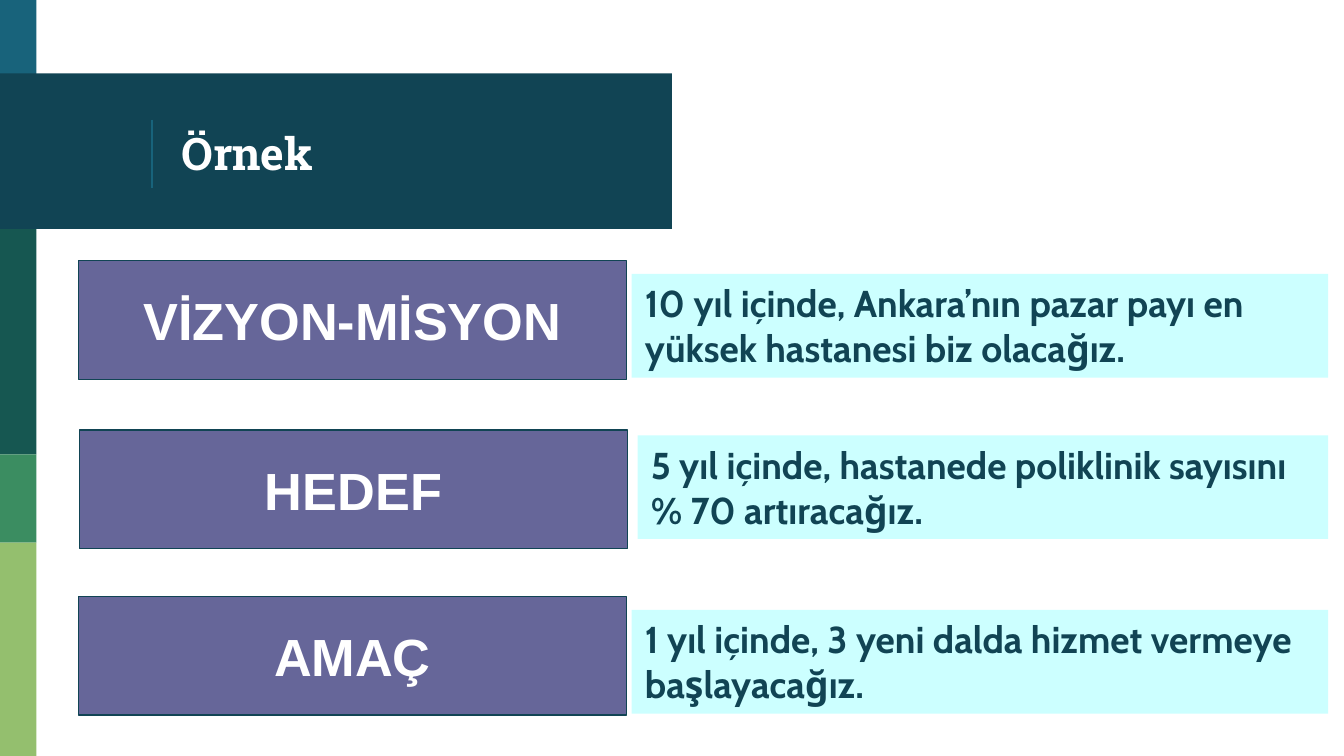
from pptx import Presentation
from pptx.dml.color import RGBColor
from pptx.enum.shapes import MSO_CONNECTOR, MSO_SHAPE
from pptx.enum.text import MSO_ANCHOR, MSO_AUTO_SIZE, PP_ALIGN
from pptx.oxml.xmlchemy import OxmlElement
from pptx.util import Cm, Pt

COLORS = {
    "blue": "18637B",
    "navy": "114454",
    "teal": "165751",
    "green": "3B8D61",
    "lime": "94BF6E",
    "purple": "666699",
    "cyan": "CCFFFF",
    "white": "FFFFFF",
}
TITLE = "Örnek"
BANDS = [
    ("blue", 0, 0.69, 1.47),
    ("navy", 1.39, 12.7, 2.94),
    ("teal", 4.33, 0.69, 4.26),
    ("green", 8.59, 0.69, 1.67),
    ("lime", 10.26, 0.69, 4.03),
]
ROWS = [
    ("VİZYON-MİSYON", 1.48, 4.93,
     "10 yıl içinde, Ankara’nın pazar payı en yüksek hastanesi biz olacağız.", 11.94, 5.18),
    ("HEDEF", 1.5, 8.13,
     "5 yıl içinde, hastanede poliklinik sayısını % 70 artıracağız.", 12.05, 8.23),
    ("AMAÇ", 1.48, 11.28,
     "1 yıl içinde, 3 yeni dalda hizmet vermeye başlayacağız.", 11.94, 11.53),
]
LABEL_WIDTH, LABEL_HEIGHT = 10.36, 2.24
TEXT_RIGHT, TEXT_HEIGHT = 25.1, 1.96


def color(name):
    return RGBColor.from_string(COLORS[name])


def add_box(slide, left, top, width, height, fill, outline=None):
    shape = slide.shapes.add_shape(
        MSO_SHAPE.RECTANGLE, Cm(left), Cm(top), Cm(width), Cm(height))
    shape.shadow.inherit = False
    shape.fill.solid()
    shape.fill.fore_color.rgb = color(fill)
    if outline:
        shape.line.color.rgb = color(outline)
        shape.line.width = Pt(0.75)
    else:
        shape.line.fill.background()
    return shape


def write(shape, text, font, size, font_color, align, anchor):
    frame = shape.text_frame
    frame.text = text
    frame.vertical_anchor = anchor
    paragraph = frame.paragraphs[0]
    paragraph.alignment = align
    paragraph.font.name = font
    paragraph.font.size = Pt(size)
    paragraph.font.bold = True
    paragraph.font.color.rgb = color(font_color)
    return frame


def add_title(slide):
    line = slide.shapes.add_connector(
        MSO_CONNECTOR.STRAIGHT, Cm(2.87), Cm(2.26), Cm(2.87), Cm(3.56))
    line.line.color.rgb = color("blue")
    line.line.width = Pt(0.75)
    line.element.spPr.append(OxmlElement("a:effectLst"))

    title = slide.shapes.title
    title.left, title.top, title.width, title.height = Cm(3.18), Cm(1.47), Cm(8.92), Cm(2.84)
    frame = write(title, TITLE, "Roboto Slab", 24, "white", PP_ALIGN.LEFT, MSO_ANCHOR.MIDDLE)
    frame.margin_left = frame.margin_right = frame.margin_top = frame.margin_bottom = Cm(0.25)
    frame.auto_size = MSO_AUTO_SIZE.NONE
    line.element.addnext(title.element)


def add_row(slide, label, label_left, label_top, text, text_left, text_top):
    label_box = add_box(
        slide, label_left, label_top, LABEL_WIDTH, LABEL_HEIGHT, "purple", "navy")
    frame = write(label_box, label, "Arial", 28, "white", PP_ALIGN.CENTER, MSO_ANCHOR.MIDDLE)
    frame.word_wrap = False

    text_box = add_box(
        slide, text_left, text_top, TEXT_RIGHT - text_left, TEXT_HEIGHT, "cyan")
    frame = write(text_box, text, "Cabin", 20, "navy", PP_ALIGN.LEFT, MSO_ANCHOR.TOP)
    frame.word_wrap = True
    frame.auto_size = MSO_AUTO_SIZE.SHAPE_TO_FIT_TEXT


def main():
    """Build the slide that sets out vision, target and aim with examples."""
    presentation = Presentation()
    presentation.slide_width, presentation.slide_height = Cm(25.4), Cm(14.29)
    slide = presentation.slides.add_slide(presentation.slide_layouts[5])
    for fill, top, width, height in BANDS:
        add_box(slide, 0, top, width, height, fill)
    add_title(slide)
    for row in ROWS:
        add_row(slide, *row)
    presentation.save("out.pptx")


if __name__ == "__main__":
    main()
